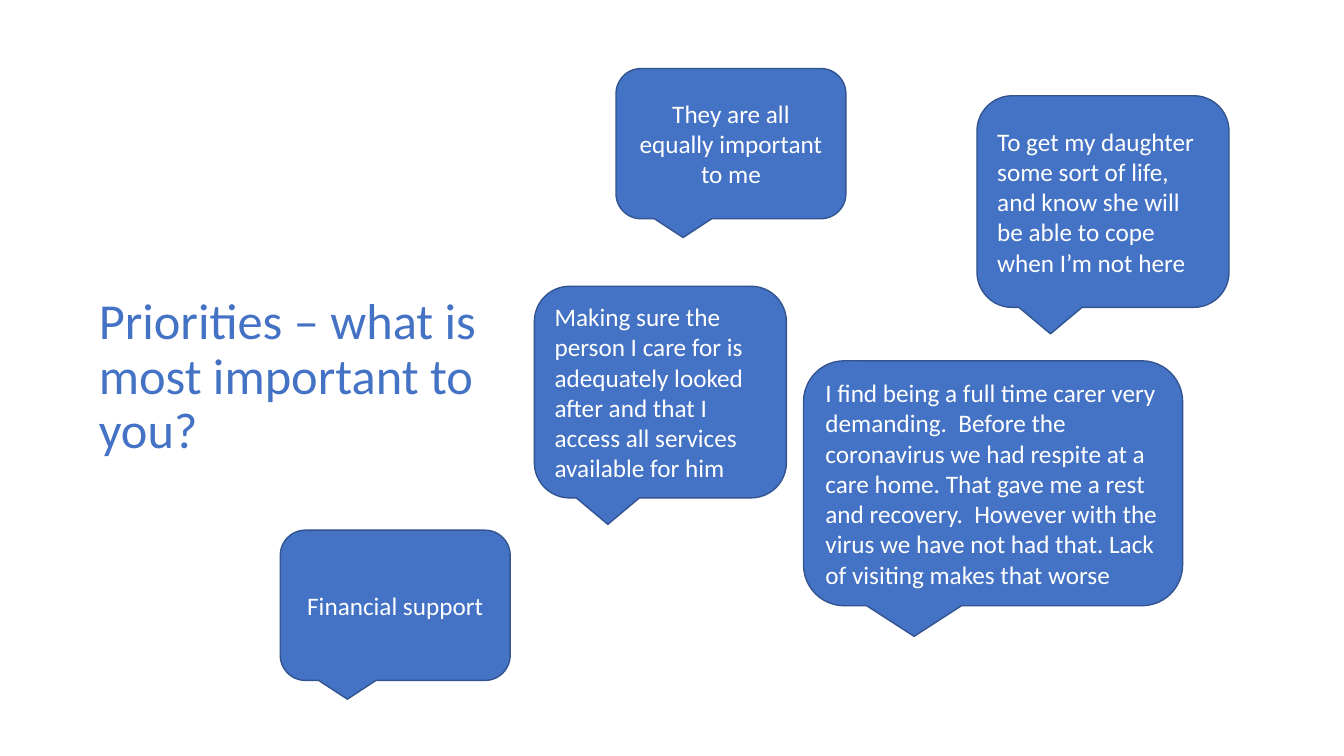
from pptx import Presentation
from pptx.dml.color import RGBColor
from pptx.enum.shapes import MSO_SHAPE as Shape
from pptx.enum.text import MSO_ANCHOR as Anchor, MSO_AUTO_SIZE as AutoSize, PP_ALIGN as Align
from pptx.util import Inches, Pt

BLUE = "4472C4"
OUTLINE = "325491"
WHITE = "FFFFFF"
SMALL = (2.28, 1.49)
MEDIUM = (2.5, 2.1)
LARGE = (3.76, 2.43)

BUBBLES = [
    ((2.78, 5.26), SMALL, Align.CENTER, "Financial support"),
    ((5.3, 2.84), MEDIUM, Align.LEFT,
     "Making sure the person I care for is adequately looked after "
     "and that I access all services available for him"),
    ((6.11, 0.68), SMALL, Align.CENTER, "They are all equally important to me"),
    ((7.97, 3.58), LARGE, Align.LEFT,
     "I find being a full time carer very demanding.  Before the coronavirus "
     "we had respite at a care home. That gave me a rest and recovery.  However "
     "with the virus we have not had that. Lack of visiting makes that worse"),
    ((9.69, 0.95), MEDIUM, Align.LEFT,
     "To get my daughter some sort of life, and know she will be able "
     "to cope when I’m not here"),
]


def color(value):
    return RGBColor.from_string(value)


def write(shape, text, size, text_color, align):
    frame = shape.text_frame
    frame.text = text
    frame.word_wrap = True
    frame.auto_size = AutoSize.NONE
    frame.vertical_anchor = Anchor.MIDDLE
    para = frame.paragraphs[0]
    para.alignment = align
    para.font.name = "Calibri"
    para.font.size = Pt(size)
    para.font.color.rgb = color(text_color)
    return para


def place_title(page, box, text):
    title = page.shapes.title
    title.left, title.top, title.width, title.height = map(Inches, box)
    para = write(title, text, 36, BLUE, Align.LEFT)
    para.line_spacing = 0.9


def add_bubble(page, box, text, align):
    bubble = page.shapes.add_shape(Shape.ROUNDED_RECTANGULAR_CALLOUT, *map(Inches, box))
    bubble.shadow.inherit = False
    bubble.fill.solid()
    bubble.fill.fore_color.rgb = color(BLUE)
    bubble.line.color.rgb = color(OUTLINE)
    bubble.line.width = Pt(1)
    write(bubble, text, 18, WHITE, align)


def build_priorities(deck):
    page = deck.slides.add_slide(deck.slide_layouts[5])
    place_title(page, (0.88, 1.36, 4.22, 4.78), "Priorities – what is most important to you?")
    for position, size, align, text in BUBBLES:
        add_bubble(page, position + size, text, align)


def main():
    deck = Presentation()
    deck.slide_width = Inches(13.33)
    deck.slide_height = Inches(7.5)
    build_priorities(deck)
    deck.save("out.pptx")


if __name__ == "__main__":
    main()
